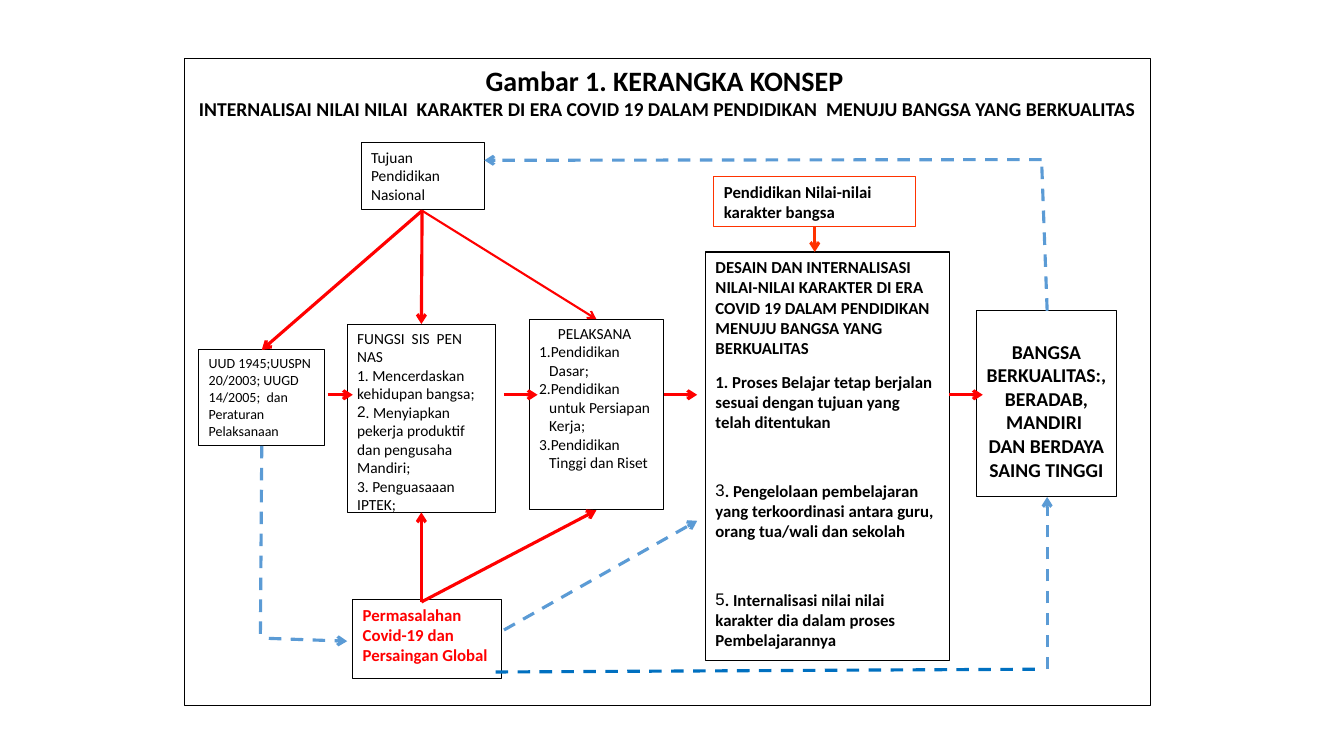
from lxml import etree
from pptx import Presentation
from pptx.dml.color import RGBColor
from pptx.enum.dml import MSO_LINE
from pptx.enum.shapes import MSO_CONNECTOR, MSO_SHAPE
from pptx.enum.text import MSO_ANCHOR, PP_ALIGN
from pptx.oxml.ns import qn
from pptx.util import Pt

BLACK = RGBColor(0x00, 0x00, 0x00)
WHITE = RGBColor(0xFF, 0xFF, 0xFF)
RED = RGBColor(0xFF, 0x00, 0x00)
ORANGE = RGBColor(0xFF, 0x33, 0x00)
BLUE = RGBColor(0x5B, 0x9B, 0xD5)
DARK_BLUE = RGBColor(0x00, 0x70, 0xC0)
RECTANGLE = MSO_SHAPE.RECTANGLE
STRAIGHT = MSO_CONNECTOR.STRAIGHT
DASH = MSO_LINE.DASH
TOP = MSO_ANCHOR.TOP
LEFT = PP_ALIGN.LEFT
CENTER = PP_ALIGN.CENTER

presentation = Presentation()
presentation.slide_width = Pt(960)
presentation.slide_height = Pt(540)
slide = presentation.slides.add_slide(presentation.slide_layouts[6])


def add_box(bounds, texts, size, bold=False, color=BLACK, align=LEFT, outline=BLACK, after=0):
    shape = slide.shapes.add_shape(RECTANGLE, *[Pt(value) for value in bounds])
    shape.shadow.inherit = False
    shape.fill.solid()
    shape.fill.fore_color.rgb = WHITE
    shape.line.color.rgb = outline
    shape.line.width = Pt(0.75)
    text_frame = shape.text_frame
    text_frame.word_wrap = True
    text_frame.vertical_anchor = TOP
    text_frame.text = "\n".join(texts)
    for paragraph in text_frame.paragraphs:
        paragraph.alignment = align
        paragraph.space_after = Pt(after)
        for run in paragraph.runs:
            run.font.name = "Calibri"
            run.font.size = Pt(size)
            run.font.bold = bold
            run.font.color.rgb = color
    return shape


def add_line(start, end, color=RED, width=2.25, dashed=False, arrow=True):
    connector = slide.shapes.add_connector(STRAIGHT, *[Pt(value) for value in start + end])
    connector.line.color.rgb = color
    connector.line.width = Pt(width)
    if dashed:
        connector.line.dash_style = DASH
    if arrow:
        etree.SubElement(connector.line._get_or_add_ln(), qn("a:tailEnd"), type="arrow")
    etree.SubElement(connector._element.spPr, qn("a:effectLst"))


frame = add_box((132, 42, 690, 462), [
    "Gambar 1. KERANGKA KONSEP ",
    "INTERNALISAI NILAI NILAI  KARAKTER DI ERA COVID 19 DALAM PENDIDIKAN  MENUJU BANGSA YANG BERKUALITAS",
], 14, bold=True, align=CENTER)
frame.text_frame.paragraphs[0].runs[0].font.size = Pt(20)

add_box((142, 250, 90, 68.5), ["UUD 1945;UUSPN 20/2003; UUGD 14/2005;  dan Peraturan Pelaksanaan"], 10)
functions = add_box((248, 231.5, 106, 134.5), [
    "FUNGSI  SIS  PEN NAS",
    "1. Mencerdaskan kehidupan bangsa;",
    ". Menyiapkan pekerja produktif dan pengusaha Mandiri;",
    "3. Penguasaaan IPTEK;",
], 11)
providers = add_box((378, 228, 96, 136), [
    "PELAKSANA ",
    "Pendidikan Dasar;",
    "Pendidikan untuk Persiapan Kerja;",
    "Pendidikan Tinggi dan Riset",
], 11)
design = add_box((504, 180, 174, 291.5), [
    "DESAIN DAN INTERNALISASI NILAI-NILAI KARAKTER DI ERA COVID 19 DALAM PENDIDIKAN MENUJU BANGSA YANG BERKUALITAS",
    "1. Proses Belajar tetap berjalan sesuai dengan tujuan yang telah ditentukan",
    ". Pengelolaan pembelajaran yang terkoordinasi antara guru, orang tua/wali dan sekolah",
    ". Internalisasi nilai nilai  karakter dia dalam proses  Pembelajarannya",
], 12, bold=True, after=10)
nation = add_box((697.5, 222, 100, 133),
                 ["BANGSA BERKUALITAS:, BERADAB, MANDIRI  DAN BERDAYA SAING TINGGI"],
                 14, bold=True, align=CENTER)
nation.text_frame.margin_top = Pt(20.7)
add_box((258, 102, 88, 48), ["Tujuan Pendidikan Nasional"], 11)
add_box((252, 428.5, 106, 56.5), ["Permasalahan Covid-19 dan Persaingan Global"], 12, bold=True, color=RED)
add_box((510, 126, 144, 36), ["Pendidikan Nilai-nilai karakter bangsa"], 12, bold=True, outline=ORANGE)

providers.text_frame.paragraphs[0].alignment = CENTER
for paragraph in providers.text_frame.paragraphs[1:]:
    properties = paragraph._p.get_or_add_pPr()
    properties.set("marL", str(Pt(7.2)))
    properties.set("indent", str(Pt(-7.2)))
    etree.SubElement(properties, qn("a:buFont"), typeface="Calibri")
    etree.SubElement(properties, qn("a:buAutoNum"), type="arabicPeriod")

design_paragraphs = design.text_frame.paragraphs
for paragraph in design_paragraphs[1:3]:
    paragraph.space_after = Pt(34.5)
for paragraph, number in [
    (functions.text_frame.paragraphs[2], "2"),
    (design_paragraphs[2], "3"),
    (design_paragraphs[3], "5"),
]:
    properties = paragraph._p.get_or_add_pPr()
    etree.SubElement(properties, qn("a:buFont"), typeface="Arial")
    etree.SubElement(properties, qn("a:buChar"), char=number)

for start, end in [(234, 252), (360, 384), (474, 498), (678, 702)]:
    add_line((start, 282), (end, 282))

goal = (301.5, 150.5)
problem = (301, 430)
add_line(goal, (301, 231.5))
add_line(goal, (426, 228), width=1.5)
add_line(goal, (187, 250))
add_line(problem, (301, 366))
add_line(problem, (426, 364.5))
add_line((582, 162), (582, 180), color=ORANGE)

add_line((354, 480), (744, 478), color=DARK_BLUE, dashed=True, arrow=False)
for start, end, arrow in [
    ((744, 114), (346, 114.5), True),
    ((360, 450), (498, 372), True),
    ((748, 222), (744, 114), False),
    ((748, 478), (748, 355), True),
    ((187, 318.5), (186, 456), False),
    ((192, 456), (248, 458), True),
]:
    add_line(start, end, color=BLUE, dashed=True, arrow=arrow)

presentation.save("out.pptx")
